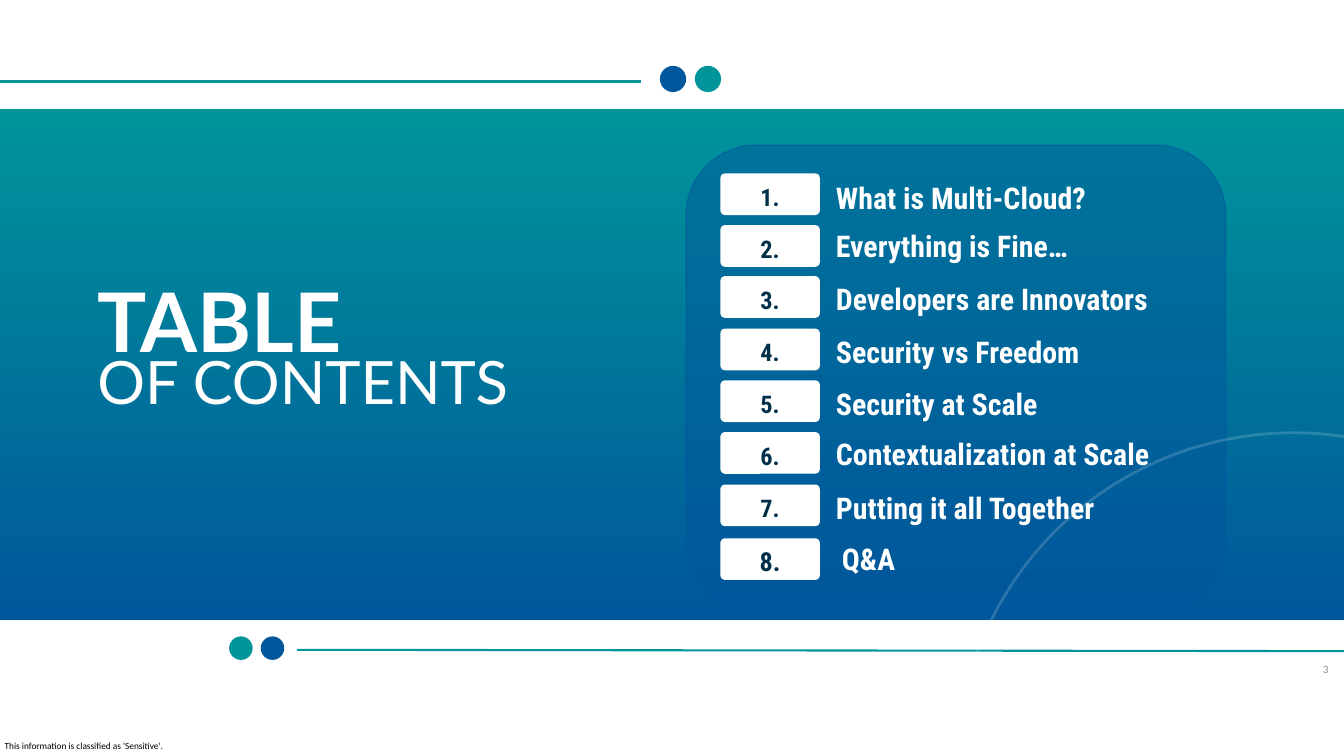
from dataclasses import dataclass

import lxml.etree
import pptx
import pptx.dml.color
import pptx.enum.shapes
import pptx.enum.text
import pptx.oxml.ns
import pptx.shapes.autoshape
import pptx.slide
import pptx.text.text
import pptx.util

Inches = pptx.util.Inches
Pt = pptx.util.Pt
RGBColor = pptx.dml.color.RGBColor
Shape = pptx.shapes.autoshape.Shape
Slide = pptx.slide.Slide
MSO_SHAPE = pptx.enum.shapes.MSO_SHAPE
PP_ALIGN = pptx.enum.text.PP_ALIGN
MSO_ANCHOR = pptx.enum.text.MSO_ANCHOR
qn = pptx.oxml.ns.qn

TEAL = RGBColor(0x00, 0x94, 0x9B)
BLUE = RGBColor(0x00, 0x57, 0x9B)
NAVY = RGBColor(0x00, 0x30, 0x49)
WHITE = RGBColor(0xFF, 0xFF, 0xFF)
BLACK = RGBColor(0x00, 0x00, 0x00)
GRAY = RGBColor(0x8C, 0x8C, 0x8C)

HEADING_FONT = "Lato"
LIST_FONT = "Roboto Condensed"
NOTE_FONT = "Calibri"

BADGE_LEFT = 10.72
BADGE_WIDTH = 1.48
BADGE_HEIGHT = 0.62


@dataclass(frozen=True)
class Box:
    left: float
    top: float
    width: float
    height: float

    def lengths(self) -> list[int]:
        return [Inches(value) for value in (self.left, self.top, self.width, self.height)]


@dataclass(frozen=True)
class TextStyle:
    font: str
    size: float
    color: RGBColor
    bold: bool = False
    align: PP_ALIGN = PP_ALIGN.LEFT
    line_spacing: float | None = None


@dataclass(frozen=True)
class Rule:
    start: tuple[float, float]
    end: tuple[float, float]
    width: float


@dataclass(frozen=True)
class Dot:
    left: float
    top: float
    diameter: float
    color: RGBColor


@dataclass(frozen=True)
class Topic:
    label: str
    badge_top: float
    label_top: float
    label_left: float = 12.44
    number_size: float = 26


RULES = [Rule((0, 1.21), (9.54, 1.21), 3), Rule((4.42, 9.67), (20.12, 9.69), 2.25)]

DOTS = [
    Dot(9.82, 0.98, 0.39, BLUE),
    Dot(10.34, 0.98, 0.39, TEAL),
    Dot(3.88, 9.47, 0.35, BLUE),
    Dot(3.41, 9.47, 0.35, TEAL),
]

TOPICS = [
    Topic("What is Multi-Cloud?", 2.58, 2.58),
    Topic("Everything is Fine…", 3.35, 3.3),
    Topic("Developers are Innovators", 4.11, 4.09),
    Topic("Security vs Freedom", 4.89, 4.87),
    Topic("Security at Scale", 5.66, 5.65),
    Topic("Contextualization at Scale", 6.43, 6.4),
    Topic("Putting it all Together", 7.21, 7.19),
    Topic("Q&A", 8.01, 7.96, 12.53, 28),
]


def style_paragraph(paragraph: pptx.text.text._Paragraph, style: TextStyle) -> None:
    paragraph.alignment = style.align
    paragraph.font.name = style.font
    paragraph.font.size = Pt(style.size)
    paragraph.font.bold = style.bold
    paragraph.font.color.rgb = style.color
    if style.line_spacing is not None:
        paragraph.line_spacing = Pt(style.line_spacing)


def write_text(shape: Shape, lines: list[tuple[str, TextStyle]],
               anchor: MSO_ANCHOR = MSO_ANCHOR.TOP, top_margin: float = 0) -> None:
    frame = shape.text_frame
    frame.word_wrap = True
    frame.auto_size = pptx.enum.text.MSO_AUTO_SIZE.NONE
    frame.vertical_anchor = anchor
    frame.margin_left = frame.margin_right = frame.margin_bottom = 0
    frame.margin_top = Inches(top_margin)
    frame.text = "\n".join(text for text, _ in lines)
    for paragraph, (_, style) in zip(frame.paragraphs, lines):
        style_paragraph(paragraph, style)


def add_text(slide: Slide, box: Box, text: str, style: TextStyle,
             anchor: MSO_ANCHOR = MSO_ANCHOR.TOP) -> None:
    write_text(slide.shapes.add_textbox(*box.lengths()), [(text, style)], anchor)


def add_plain_shape(slide: Slide, kind: MSO_SHAPE, box: Box,
                    color: RGBColor | None = None) -> Shape:
    shape = slide.shapes.add_shape(kind, *box.lengths())
    shape.shadow.inherit = False
    shape.line.fill.background()
    if color is None:
        shape.fill.background()
    else:
        shape.fill.solid()
        shape.fill.fore_color.rgb = color
    return shape


def set_outline(shape: Shape, color: RGBColor, width: float, opacity: int) -> None:
    shape.line.color.rgb = color
    shape.line.width = Pt(width)
    set_opacity(shape.line._ln, opacity)


def set_opacity(parent: lxml.etree._Element, percent: int) -> None:
    color = parent.find(qn("a:solidFill")).find(qn("a:srgbClr"))
    lxml.etree.SubElement(color, qn("a:alpha"), val=str(percent * 1000))


def add_rule(slide: Slide, rule: Rule) -> None:
    connector = slide.shapes.add_connector(
        pptx.enum.shapes.MSO_CONNECTOR.STRAIGHT,
        *(Inches(value) for value in rule.start + rule.end))
    connector.line.color.rgb = TEAL
    connector.line.width = Pt(rule.width)
    lxml.etree.SubElement(connector._element.spPr, qn("a:effectLst"))


def add_band(slide: Slide) -> None:
    band = add_plain_shape(slide, MSO_SHAPE.RECTANGLE, Box(-0.03, 1.62, 20.16, 7.61))
    band.fill.gradient()
    band.fill.gradient_angle = 270
    for stop, position, color in zip(band.fill.gradient_stops, (0, 1), (TEAL, BLUE)):
        stop.position = position
        stop.color.rgb = color


def add_panel(slide: Slide) -> None:
    panel = add_plain_shape(slide, MSO_SHAPE.ROUNDED_RECTANGLE, Box(10.21, 2.16, 8.03, 6.92), BLUE)
    panel.adjustments[0] = 0.15
    set_opacity(panel._element.spPr, 50)
    set_outline(panel, BLUE, 1.5, 50)


def add_topic(slide: Slide, number: int, topic: Topic) -> None:
    badge = add_plain_shape(slide, MSO_SHAPE.ROUNDED_RECTANGLE,
                            Box(BADGE_LEFT, topic.badge_top, BADGE_WIDTH, BADGE_HEIGHT), WHITE)
    badge.adjustments[0] = 0.11
    number_style = TextStyle(LIST_FONT, topic.number_size, NAVY, True, PP_ALIGN.CENTER, 36.4)
    write_text(badge, [(f"{number}.", number_style)], top_margin=0.04)
    add_text(slide, Box(topic.label_left, topic.label_top, 5.44, 0.59), topic.label,
             TextStyle(LIST_FONT, 32, WHITE, True, line_spacing=44.8))


def main() -> None:
    presentation = pptx.Presentation()
    presentation.slide_width = Inches(20)
    presentation.slide_height = Inches(11.25)
    slide = presentation.slides.add_slide(presentation.slide_layouts.get_by_name("Title Only"))

    for rule in RULES:
        add_rule(slide, rule)
    for dot in DOTS:
        add_plain_shape(slide, MSO_SHAPE.OVAL,
                        Box(dot.left, dot.top, dot.diameter, dot.diameter), dot.color)
    add_band(slide)
    add_panel(slide)
    for number, topic in enumerate(TOPICS, start=1):
        add_topic(slide, number, topic)
    ring = add_plain_shape(slide, MSO_SHAPE.OVAL, Box(14.23, 6.44, 10.03, 10.03))
    set_outline(ring, WHITE, 3, 16)

    title = slide.shapes.title
    title.left, title.top, title.width, title.height = Box(1.45, 4.51, 6.52, 1.73).lengths()
    write_text(title, [
        ("TABLE", TextStyle(HEADING_FONT, 88, WHITE, True, line_spacing=70.4)),
        ("OF CONTENTS", TextStyle(HEADING_FONT, 64, WHITE, line_spacing=51.2)),
    ])
    slide.shapes._spTree.append(title._element)

    add_text(slide, Box(17.54, 9.76, 2.23, 0.4), "3",
             TextStyle(NOTE_FONT, 12, GRAY, align=PP_ALIGN.RIGHT), MSO_ANCHOR.MIDDLE)
    add_text(slide, Box(0.07, 11.01, 2.4, 0.17), "This information is classified as 'Sensitive'.",
             TextStyle(NOTE_FONT, 10, BLACK))
    presentation.save("out.pptx")


if __name__ == "__main__":
    main()
